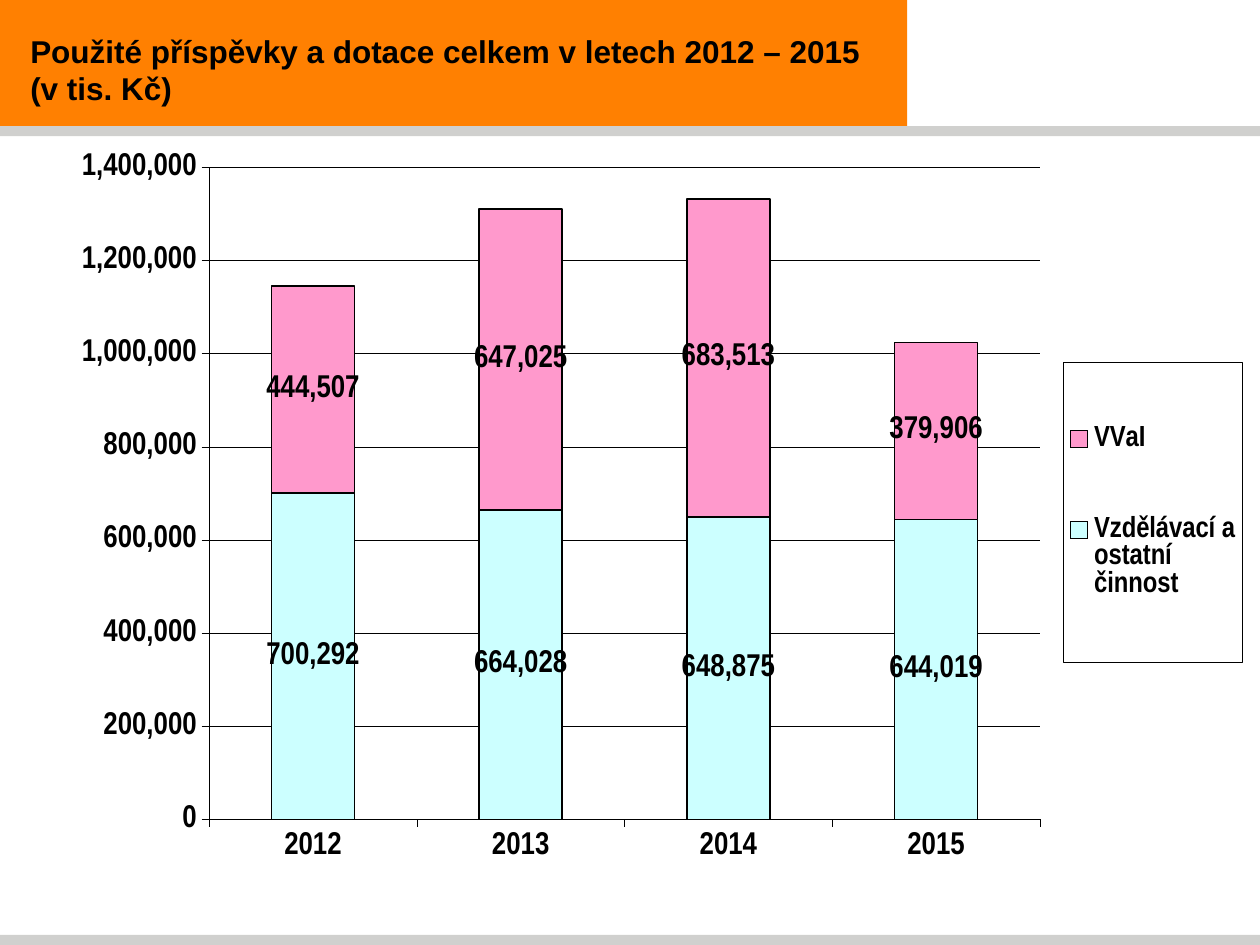
from pptx import Presentation
from pptx.chart.data import CategoryChartData
from pptx.dml.color import RGBColor
from pptx.enum.chart import XL_CHART_TYPE, XL_LEGEND_POSITION, XL_TICK_LABEL_POSITION, XL_TICK_MARK
from pptx.enum.shapes import MSO_SHAPE
from pptx.enum.text import MSO_ANCHOR, PP_ALIGN
from pptx.oxml import parse_xml
from pptx.oxml.ns import nsdecls, qn
from pptx.util import Inches, Pt

STACKED = XL_CHART_TYPE.COLUMN_STACKED
RIGHT = XL_LEGEND_POSITION.RIGHT
LOW = XL_TICK_LABEL_POSITION.LOW
OUTSIDE, NO_TICK = XL_TICK_MARK.OUTSIDE, XL_TICK_MARK.NONE
RECTANGLE = MSO_SHAPE.RECTANGLE
MIDDLE, LEFT = MSO_ANCHOR.MIDDLE, PP_ALIGN.LEFT

TITLE = ["Použité příspěvky a dotace celkem v letech 2012 – 2015", "(v tis. Kč)"]
YEARS = ["2012", "2013", "2014", "2015"]
SERIES = [
    ("Vzdělávací a ostatní činnost", [700292, 664028, 648875, 644019], "education"),
    ("VVaI", [444507, 647025, 683513, 379906], "research"),
]
BANDS = [
    ((0, 0, 7.2, 1), "header"),
    ((0, 7.42, 10, 0.08), "rule"),
    ((0, 1, 10, 0.08), "rule"),
]
TITLE_BOX = (0, 0.08, 7.2, 0.94)
CHART_BOX = (0.53, 1.21, 9.42, 5.95)
# Fractions of the chart's width and height: left, top, width, height
PLOT_AREA = (0.12, 0.02, 0.7, 0.87)
LEGEND_AREA = (0.84, 0.28, 0.15, 0.4)

THEME = {
    "colors": {
        "header": "FF8001", "rule": "D0D0CE", "ink": "000000",
        "education": "CCFFFF", "research": "FF99CC",
    },
    "title": {"name": "Arial", "size": Pt(18), "bold": True},
    "chart": {"name": "Arial Narrow", "size": Pt(18), "bold": True},
    "legend": {"name": "Arial Narrow", "size": Pt(16.6), "bold": True},
    "thin": 0.25,
    "outline": 1,
}


def color(name):
    return RGBColor.from_string(THEME["colors"][name])


def set_font(font, style):
    for attribute, value in THEME[style].items():
        setattr(font, attribute, value)
    font.color.rgb = color("ink")


def set_line(line, weight):
    line.color.rgb = color("ink")
    line.width = Pt(THEME[weight])


def place(shape, box):
    shape.left, shape.top, shape.width, shape.height = map(Inches, box)


def manual_layout(area, target=""):
    modes = "".join(f'<c:{side}Mode val="edge"/>' for side in "xy")
    sizes = "".join(f'<c:{key} val="{value}"/>' for key, value in zip("xywh", area))
    return parse_xml(
        f'<c:layout {nsdecls("c")}><c:manualLayout>{target}{modes}{sizes}'
        "</c:manualLayout></c:layout>"
    )


def remove_layout(element):
    for layout in element.findall(qn("c:layout")):
        element.remove(layout)


def add_title(slide):
    title = slide.shapes.title
    place(title, TITLE_BOX)
    frame = title.text_frame
    frame.word_wrap = True
    frame.vertical_anchor = MIDDLE
    frame.margin_left = Inches(0.24)
    frame.margin_right = Inches(0.1)
    frame.text = "\n".join(TITLE)
    for paragraph in frame.paragraphs:
        paragraph.alignment = LEFT
        paragraph.line_spacing = 1
        paragraph.space_before = Pt(0)
        set_font(paragraph.font, "title")
    return title


def add_bands(slide, title):
    """Draw the coloured bands behind the title."""
    for box, fill in BANDS:
        band = slide.shapes.add_shape(RECTANGLE, *map(Inches, box))
        band.shadow.inherit = False
        band.fill.solid()
        band.fill.fore_color.rgb = color(fill)
        band.line.fill.background()
        title.element.addprevious(band.element)


def format_axes(chart):
    for axis in (chart.category_axis, chart.value_axis):
        axis.major_tick_mark = OUTSIDE
        axis.minor_tick_mark = NO_TICK
        set_font(axis.tick_labels.font, "chart")
        set_line(axis.format.line, "thin")
    chart.category_axis.tick_label_position = LOW
    values = chart.value_axis
    values.minimum_scale, values.maximum_scale, values.major_unit = 0, 1400000, 200000
    values.tick_labels.number_format = "#,##0"
    values.tick_labels.number_format_is_linked = False
    values.has_major_gridlines = True
    set_line(values.major_gridlines.format.line, "thin")


def format_series(plot):
    plot.gap_width, plot.overlap = 150, 100
    plot.vary_by_categories = False
    for series, (_, _, fill) in zip(plot.series, SERIES):
        series.format.fill.solid()
        series.format.fill.fore_color.rgb = color(fill)
        set_line(series.format.line, "outline")
        labels = series.data_labels
        labels.show_value = True
        labels.number_format = "#,##0"
        labels.number_format_is_linked = False
        set_font(labels.font, "chart")


def format_legend(chart):
    chart.has_legend = True
    chart.legend.position = RIGHT
    chart.legend.include_in_layout = False
    set_font(chart.legend.font, "legend")
    legend = chart.element.find(".//" + qn("c:legend"))
    remove_layout(legend)
    legend.find(qn("c:legendPos")).addnext(manual_layout(LEGEND_AREA))
    border = parse_xml(
        f'<c:spPr {nsdecls("c", "a")}><a:noFill/><a:ln w="{Pt(THEME["thin"])}"><a:solidFill>'
        f'<a:srgbClr val="{THEME["colors"]["ink"]}"/></a:solidFill></a:ln></c:spPr>'
    )
    legend.find(qn("c:txPr")).addprevious(border)


def add_funding_chart(slide):
    data = CategoryChartData(number_format="#,##0")
    data.categories = YEARS
    for name, values, _ in SERIES:
        data.add_series(name, values)
    chart = slide.shapes.add_chart(STACKED, *map(Inches, CHART_BOX), data).chart
    chart.has_title = False
    set_font(chart.font, "chart")
    format_axes(chart)
    format_series(chart.plots[0])
    format_legend(chart)
    plot_area = chart.element.find(".//" + qn("c:plotArea"))
    remove_layout(plot_area)
    plot_area.insert(0, manual_layout(PLOT_AREA, '<c:layoutTarget val="inner"/>'))


def main():
    presentation = Presentation()
    presentation.slide_width, presentation.slide_height = Inches(10), Inches(7.5)
    slide = presentation.slides.add_slide(presentation.slide_layouts[5])
    title = add_title(slide)
    add_bands(slide, title)
    add_funding_chart(slide)
    presentation.save("out.pptx")


if __name__ == "__main__":
    main()
